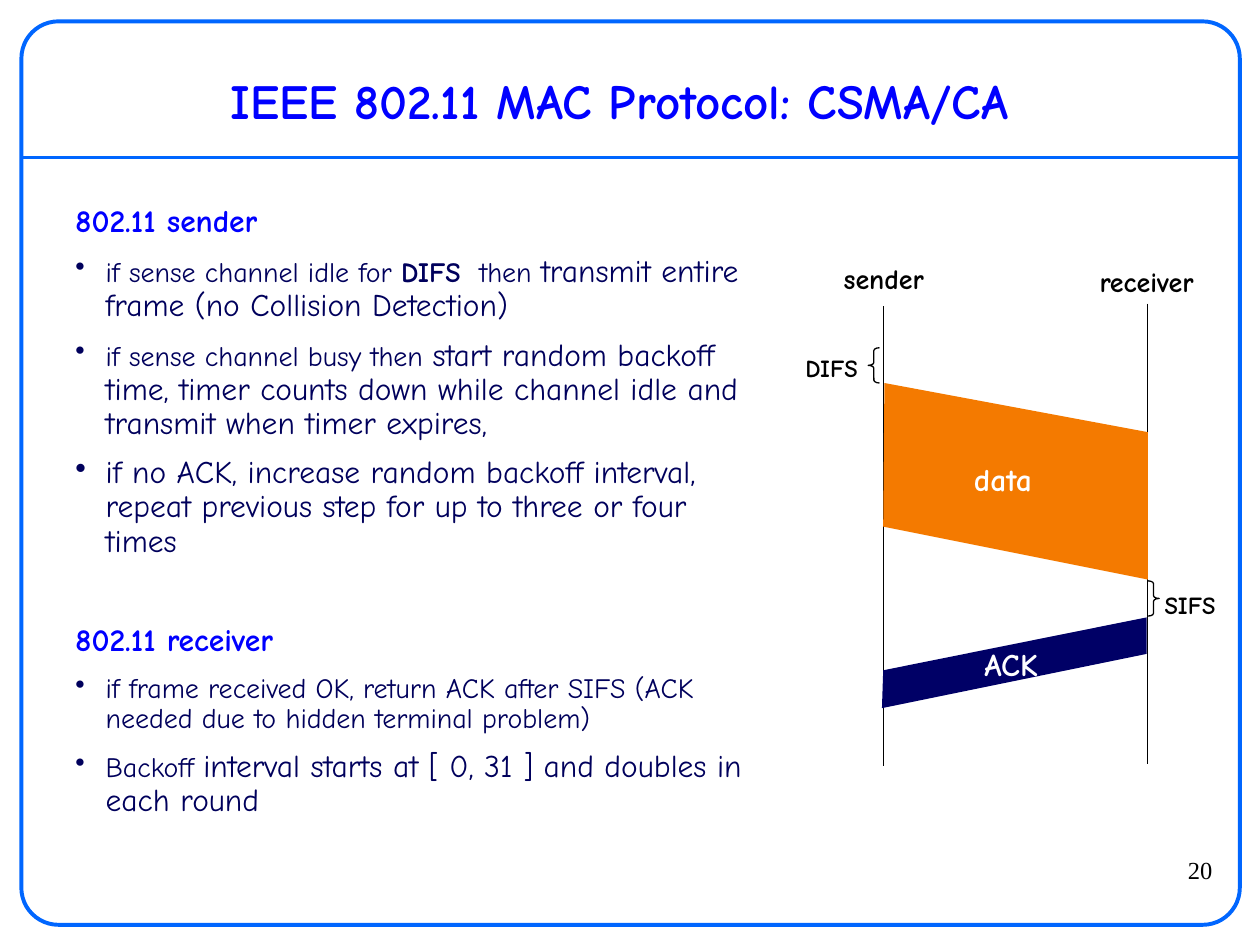
from dataclasses import dataclass

from lxml import etree
from pptx import Presentation
from pptx import util as u
from pptx.dml.color import RGBColor
from pptx.enum import shapes, text
from pptx.oxml.ns import qn

LEFT, CENTER, RIGHT = text.PP_ALIGN.LEFT, text.PP_ALIGN.CENTER, text.PP_ALIGN.RIGHT


@dataclass(frozen=True)
class Theme:
    font: str = "Comic Neue"
    number_font: str = "Times New Roman"
    frame: str = "0066FF"
    heading: str = "0000FF"
    body: str = "00005C"
    ink: str = "000000"
    white: str = "FFFFFF"
    data: str = "F47A00"
    ack: str = "000066"
    title_size: int = 28
    large: int = 18
    medium: int = 16
    small: int = 14
    frame_line: float = 2.25
    thin_line: float = 0.75


class SlideBuilder:
    def __init__(self, slide, theme):
        self.slide = slide
        self.theme = theme

    def _stroke(self, line, color, width):
        line.color.rgb = RGBColor.from_string(color)
        line.width = u.Pt(width)

    def _style(self, font, size, color, bold=False, name=None):
        font.name = name or self.theme.font
        font.size = u.Pt(size)
        font.bold = bold
        font.color.rgb = RGBColor.from_string(color)

    def line(self, start, end, color, width):
        ends = [u.Inches(v) for v in (*start, *end)]
        connector = self.slide.shapes.add_connector(shapes.MSO_CONNECTOR.STRAIGHT, *ends)
        self._stroke(connector.line, color, width)
        etree.SubElement(connector._element.spPr, qn("a:effectLst"))

    def outline(self, preset, box, adjustments, color, width):
        shape = self.slide.shapes.add_shape(preset, *map(u.Inches, box))
        shape.shadow.inherit = False
        shape.fill.background()
        for i, value in enumerate(adjustments):
            shape.adjustments[i] = value
        self._stroke(shape.line, color, width)

    def band(self, points, color):
        corners = [(u.Inches(x), u.Inches(y)) for x, y in points]
        builder = self.slide.shapes.build_freeform(*corners[0])
        builder.add_line_segments(corners[1:], close=True)
        shape = builder.convert_to_shape()
        shape.shadow.inherit = False
        shape.fill.solid()
        shape.fill.fore_color.rgb = RGBColor.from_string(color)
        shape.line.fill.background()

    def text_frame(self, box, wrap):
        frame = self.slide.shapes.add_textbox(*map(u.Inches, box)).text_frame
        frame.word_wrap = wrap
        return frame

    def label(self, words, box, size, color, bold=True, align=CENTER, wrap=False,
              name=None, anchor=text.MSO_ANCHOR.TOP):
        frame = self.text_frame(box, wrap)
        frame.vertical_anchor = anchor
        paragraph = frame.paragraphs[0]
        paragraph.text = words
        paragraph.alignment = align
        self._style(paragraph.font, size, color, bold, name)

    def _body_paragraph(self, paragraph, space_before):
        paragraph.alignment = LEFT
        paragraph.line_spacing = 0.9
        paragraph.space_before = u.Pt(space_before)
        props = paragraph._p.get_or_add_pPr()
        props.set("marL", str(u.Inches(0.24)))
        props.set("indent", str(-u.Inches(0.24)))
        return props

    def heading(self, paragraph, words, space_before):
        self._body_paragraph(paragraph, space_before)
        paragraph.text = words
        self._style(paragraph.font, self.theme.large, self.theme.heading, True)

    def bullet(self, paragraph, pieces, space_before):
        props = self._body_paragraph(paragraph, space_before)
        etree.SubElement(props, qn("a:buChar"), char="•")
        for words, size, bold in pieces:
            run = paragraph.add_run()
            run.text = words
            self._style(run.font, size, self.theme.body, bold)

    def sections(self, box, content, gap, section_gap):
        frame = self.text_frame(box, True)
        for i, (title, bullets) in enumerate(content):
            paragraph = frame.add_paragraph() if i else frame.paragraphs[0]
            self.heading(paragraph, title, section_gap if i else 0)
            for pieces in bullets:
                self.bullet(frame.add_paragraph(), pieces, gap)


def main():
    theme = Theme()
    deck = Presentation()
    deck.slide_width, deck.slide_height = u.Inches(10), u.Inches(7.5)
    page = SlideBuilder(deck.slides.add_slide(deck.slide_layouts[6]), theme)

    # Frame and title
    page.line((0.17, 1.25), (9.83, 1.25), theme.frame, theme.frame_line)
    page.outline(shapes.MSO_SHAPE.ROUNDED_RECTANGLE, (0.17, 0.17, 9.67, 7.17),
                 [0.041], theme.frame, theme.frame_line)
    page.label("IEEE 802.11 MAC Protocol: CSMA/CA", (0.33, 0.42, 9.17, 0.75),
               theme.title_size, theme.heading, wrap=True, anchor=text.MSO_ANCHOR.MIDDLE)

    # Protocol rules
    large, medium = theme.large, theme.medium
    rules = [
        ("802.11 sender", [
            [("if sense channel idle for ", medium, False), ("DIFS", medium, True),
             ("  then ", medium, False),
             ("transmit entire frame (no Collision Detection)", large, False)],
            [("if sense channel busy then ", medium, False),
             ("start random backoff time, timer counts down while channel idle "
              "and transmit when timer expires,", large, False)],
            [("if no ACK, increase random backoff interval, repeat previous step "
              "for up to three or four times", large, False)],
        ]),
        ("802.11 receiver", [
            [("if frame received OK, return ACK after SIFS "
              "(ACK needed due to hidden terminal problem)", medium, False)],
            [("Backoff ", medium, False),
             ("interval starts at [ 0, 31 ] and doubles in each round", large, False)],
        ]),
    ]
    page.sections((0.5, 1.58, 5.58, 5.47), rules, gap=9, section_gap=37.5)

    # Timelines
    sender_x, receiver_x = 7.01, 9.11
    for x, top in ((sender_x, 2.43), (receiver_x, 2.41)):
        page.line((x, top), (x, top + 3.65), theme.ink, theme.thin_line)
    page.label("sender", (6.56, 2.03, 0.91, 0.37), medium, theme.ink)
    page.label("receiver", (8.57, 2.05, 1.06, 0.37), medium, theme.ink)

    # Waiting gaps
    for words, box, brace, left, top in (
        ("DIFS", (6.25, 2.75, 0.7, 0.33), shapes.MSO_SHAPE.LEFT_BRACE, 6.89, 2.76),
        ("SIFS", (9.1, 4.63, 0.69, 0.33), shapes.MSO_SHAPE.RIGHT_BRACE, receiver_x, 4.61),
    ):
        page.label(words, box, theme.small, theme.ink)
        page.outline(brace, (left, top, 0.09, 0.28), [0.25, 0.5],
                     theme.ink, theme.thin_line)

    # Data and acknowledgement transmissions
    page.band([(7.02, 3.04), (receiver_x, 3.43), (receiver_x, 4.6), (sender_x, 4.18)],
              theme.data)
    page.label("data", (7.6, 3.6, 0.72, 0.4), large, theme.white)
    page.band([(7, 5.62), (9.1, 5.19), (9.1, 4.9), (sender_x, 5.32)], theme.ack)
    page.label("ACK", (7.68, 5.07, 0.69, 0.4), large, theme.white)

    # Page number
    page.label("20", (9.17, 6.74, 0.55, 0.42), theme.small, theme.ink, bold=False,
               align=RIGHT, wrap=True, name=theme.number_font)

    deck.save("out.pptx")


if __name__ == "__main__":
    main()
